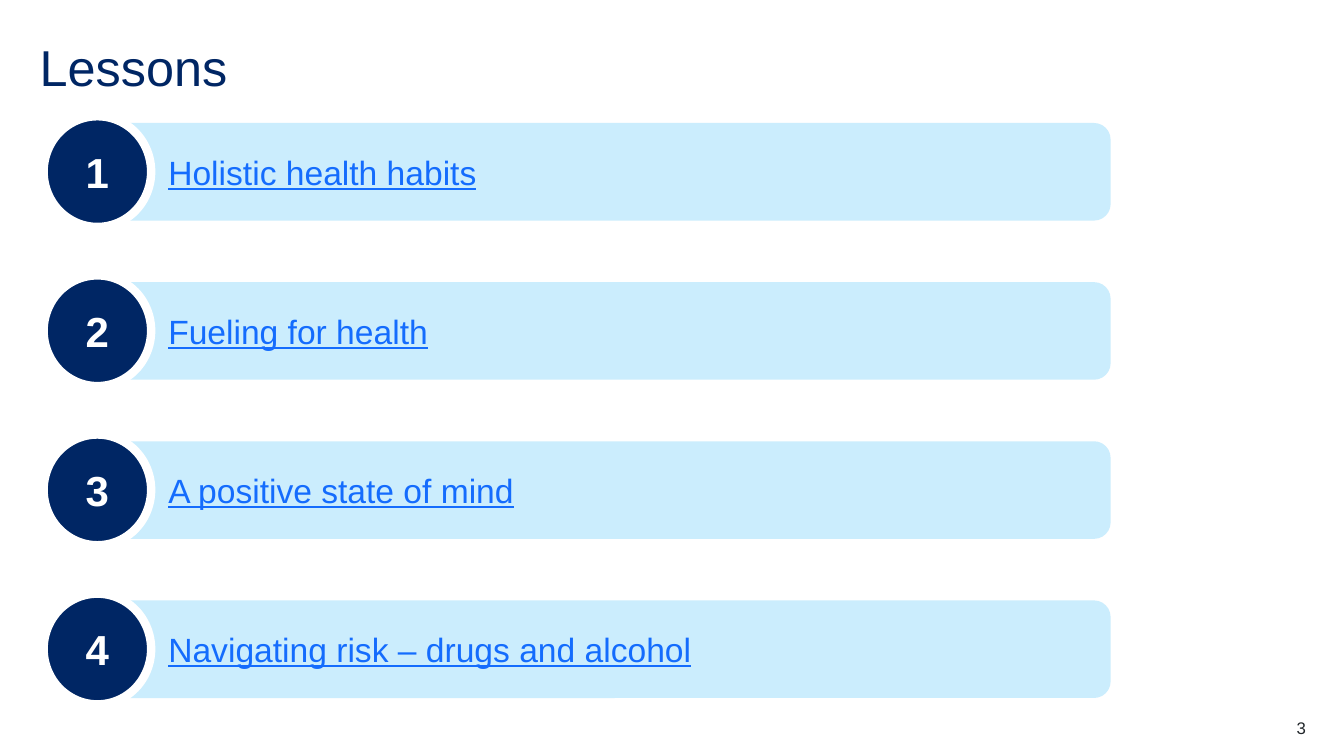
import pptx
import pptx.util
import pptx.dml.color
import pptx.enum.shapes
import pptx.enum.text

Cm = pptx.util.Cm
Pt = pptx.util.Pt
Shape = pptx.enum.shapes.MSO_SHAPE
Align = pptx.enum.text.PP_ALIGN
Anchor = pptx.enum.text.MSO_ANCHOR

NAVY, SKY, BLUE = "002664", "CBEDFD", "146CFD"
WHITE, INK = "FFFFFF", "22272B"


def color(code):
    return pptx.dml.color.RGBColor.from_string(code)


class Deck:
    font = "Arial"

    def __init__(self):
        self.prs = pptx.Presentation()
        self.prs.slide_width = Cm(33.87)
        self.prs.slide_height = Cm(19.05)
        self.slide = self.prs.slides.add_slide(self.prs.slide_layouts[6])

    def letter(self, shape, text, size, ink, align=Align.LEFT, bold=False):
        frame = shape.text_frame
        frame.word_wrap = True
        frame.vertical_anchor = Anchor.MIDDLE
        para = frame.paragraphs[0]
        para.text = text
        para.alignment = align
        para.font.name = self.font
        para.font.size = Pt(size)
        para.font.bold = bold
        para.font.color.rgb = color(ink)
        return para

    def label(self, box, text, size, ink, align=Align.LEFT):
        shape = self.slide.shapes.add_textbox(*map(Cm, box))
        frame = shape.text_frame
        frame.margin_left = frame.margin_right = 0
        frame.margin_top = frame.margin_bottom = 0
        return self.letter(shape, text, size, ink, align)

    def shape(self, kind, box, fill):
        shape = self.slide.shapes.add_shape(kind, *map(Cm, box))
        shape.shadow.inherit = False
        shape.fill.solid()
        shape.fill.fore_color.rgb = color(fill)
        shape.line.fill.background()
        return shape

    def bar(self, top, text):
        bar = self.shape(Shape.ROUNDED_RECTANGLE, (2.87, top, 25.12, 2.46), SKY)
        bar.adjustments[0] = 0.17
        para = self.letter(bar, text, 24, BLUE)
        para.font.underline = True
        para._p.get_or_add_pPr().set("marL", str(Cm(1)))

    def badge(self, top, text):
        disc = self.shape(Shape.OVAL, (1.1, top, 2.71, 2.79), NAVY)
        disc.line.color.rgb = color(WHITE)
        disc.line.width = Pt(6)
        self.letter(disc, text, 30, WHITE, Align.CENTER, True)


def main():
    deck = Deck()

    # Title
    title = deck.label((1, 1, 31.9, 1.52), "Lessons", 36, NAVY)
    title.line_spacing = 0.9

    # Numbered lessons
    names = [
        "Holistic health habits",
        "Fueling for health",
        "A positive state of mind",
        "Navigating risk – drugs and alcohol",
    ]
    first, pitch = 3.1, 4.01
    for i, name in enumerate(names):
        top = first + i * pitch
        deck.bar(top, name)
        deck.badge(top - 0.17, str(i + 1))

    # Page number
    deck.label((30.9, 18.1, 2.01, 0.5), "3", 12, INK, Align.RIGHT)

    deck.prs.save("out.pptx")


if __name__ == "__main__":
    main()
